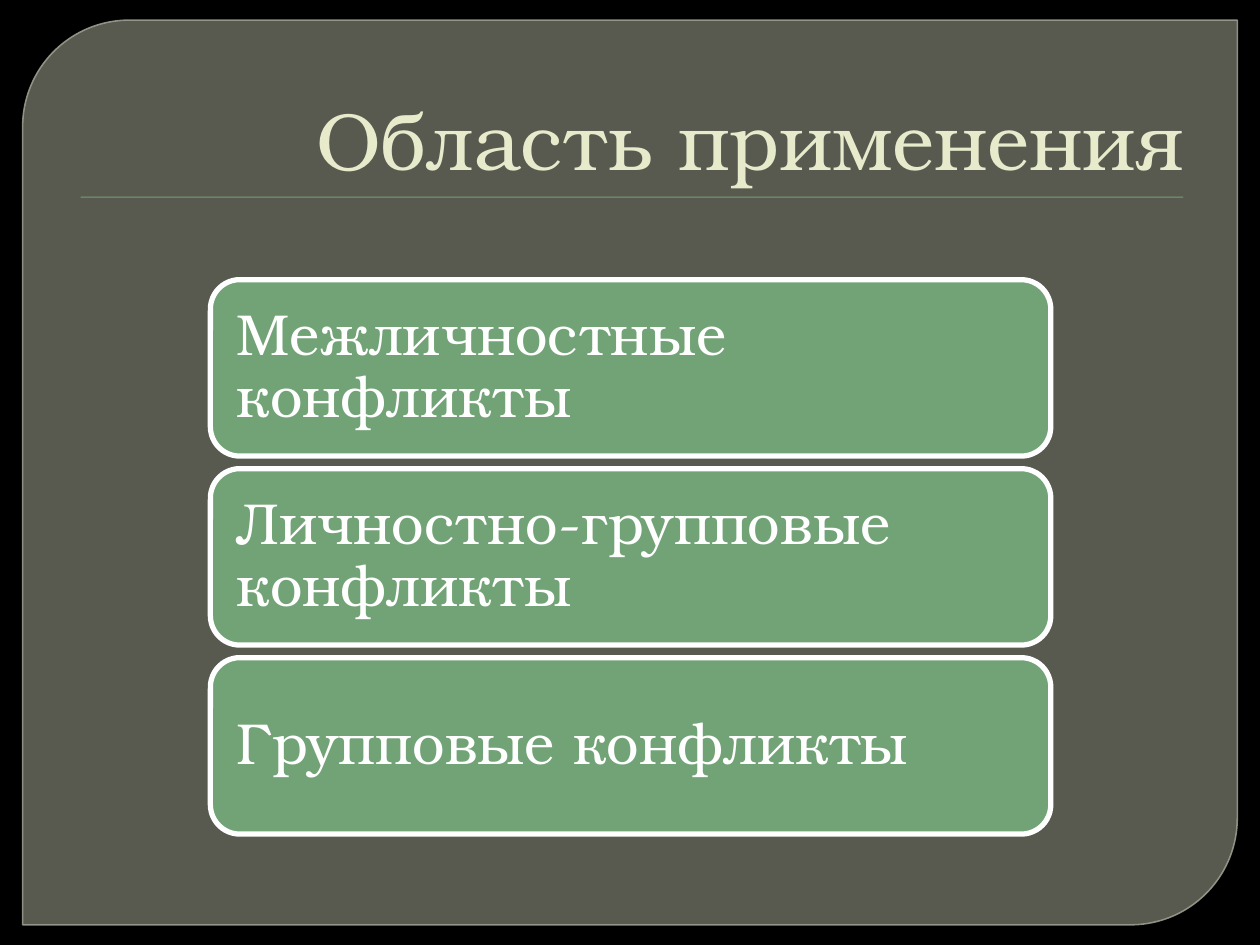
import pptx
import pptx.util
import pptx.dml.color
import pptx.enum.shapes
import pptx.enum.text
import pptx.oxml.ns
import lxml.etree

Inches = pptx.util.Inches
Pt = pptx.util.Pt
SHAPES = pptx.enum.shapes.MSO_SHAPE
ALIGN = pptx.enum.text.PP_ALIGN
ANCHOR = pptx.enum.text.MSO_ANCHOR
FONT = "TeX Gyre Bonum"


def paint(color_format, color, opacity=100):
    color_format.rgb = pptx.dml.color.RGBColor.from_string(color)
    if opacity < 100:
        clr = color_format._xFill.find(pptx.oxml.ns.qn("a:srgbClr"))
        alpha = lxml.etree.SubElement(clr, pptx.oxml.ns.qn("a:alpha"))
        alpha.set("val", str(opacity * 1000))


def write(paragraph, text, size, color):
    run = paragraph.add_run()
    run.text = text
    run.font.name = FONT
    run.font.size = Pt(size)
    paint(run.font.color, color)


prs = pptx.Presentation()
prs.slide_width, prs.slide_height = Inches(10), Inches(7.5)
slide = prs.slides.add_slide(prs.slide_layouts[5])
slide.background.fill.solid()
paint(slide.background.fill.fore_color, "000000")

# Translucent panel with two rounded corners
panel = slide.shapes.add_shape(SHAPES.ROUND_2_DIAG_RECTANGLE, Inches(0.18),
                               Inches(0.16), Inches(9.64), Inches(7.18))
panel.adjustments[0] = 0.118
panel.adjustments[1] = 0
panel.shadow.inherit = False
panel.fill.solid()
paint(panel.fill.fore_color, "888B7B", 65)
panel.line.width = Pt(0.87)
paint(panel.line.color, "9DA090", 88)

# Rule under the title
rule = slide.shapes.add_shape(SHAPES.RECTANGLE, Inches(0.64), Inches(1.56),
                              Inches(8.75), Inches(0.01))
rule.shadow.inherit = False
rule.fill.solid()
paint(rule.fill.fore_color, "72A376")
rule.line.fill.background()

# Title, brought in front of the panel
title = slide.shapes.title
slide.shapes._spTree.append(title._element)
title.left, title.top = Inches(0.5), Inches(0.28)
title.width, title.height = Inches(9), Inches(1.25)
title.text_frame.auto_size = pptx.enum.text.MSO_AUTO_SIZE.NONE
title.text_frame.vertical_anchor = ANCHOR.BOTTOM
heading = title.text_frame.paragraphs[0]
heading.alignment = ALIGN.RIGHT
write(heading, "Область применения", 46, "E7EACB")

# Stack of conflict types
conflict_types = ["Межличностные конфликты", "Личностно-групповые конфликты",
                  "Групповые конфликты"]
for row, conflict_type in enumerate(conflict_types):
    card = slide.shapes.add_shape(SHAPES.ROUNDED_RECTANGLE, Inches(1.67),
                                  Inches(2.22 + 1.5 * row), Inches(6.67), Inches(1.4))
    card.shadow.inherit = False
    card.fill.solid()
    paint(card.fill.fore_color, "72A376")
    card.line.width = Pt(3)
    paint(card.line.color, "FFFFFF")
    frame = card.text_frame
    frame.word_wrap = True
    frame.vertical_anchor = ANCHOR.MIDDLE
    # The rounded corners already inset the text by about 0.07 inch
    frame.margin_left = frame.margin_right = Inches(0.14)
    frame.margin_top = frame.margin_bottom = Inches(0.14)
    label = frame.paragraphs[0]
    label.alignment = ALIGN.LEFT
    label.line_spacing = 0.9
    write(label, conflict_type, 33, "FFFFFF")

prs.save("out.pptx")
